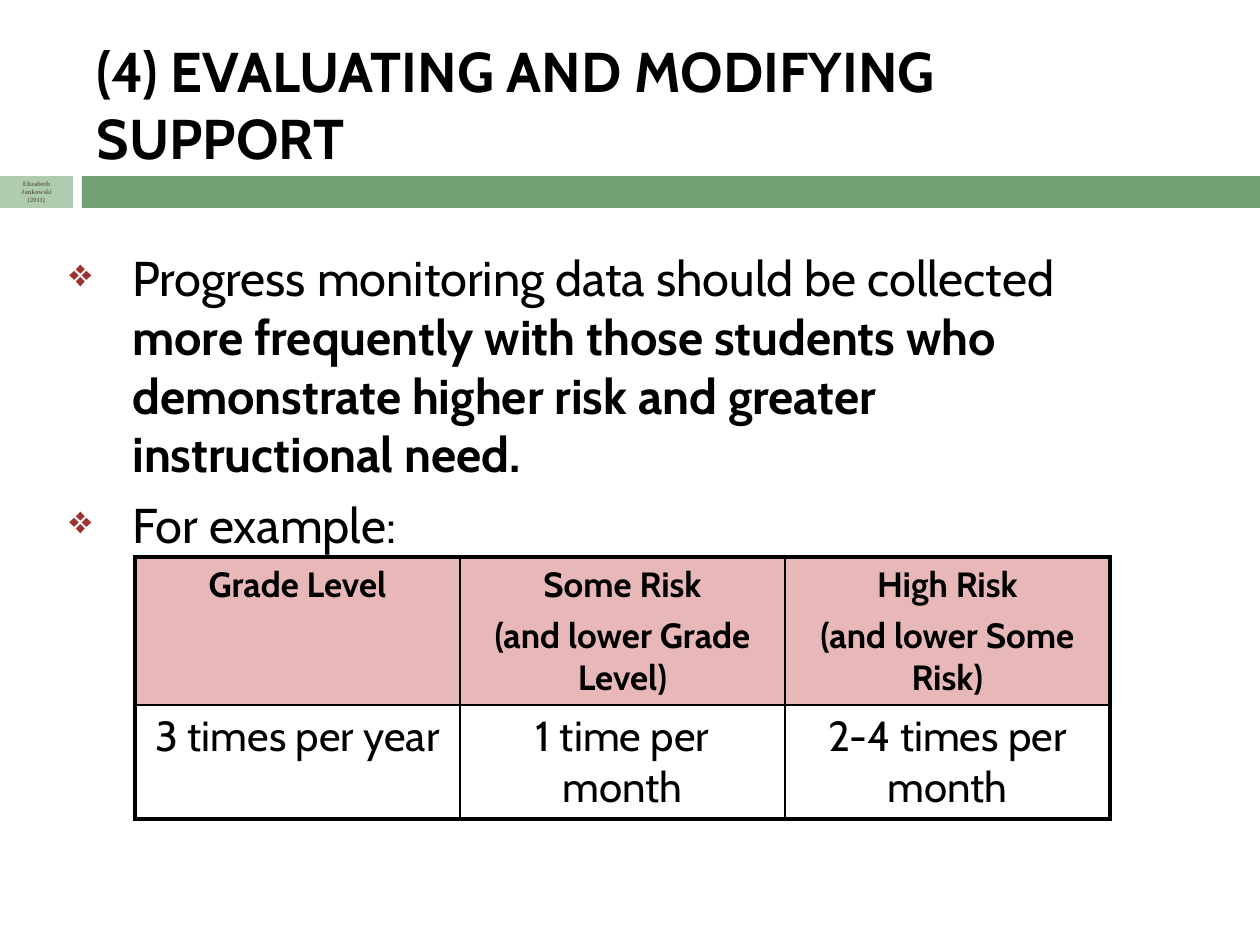
from lxml import etree
from pptx import Presentation
from pptx.dml.color import RGBColor
from pptx.enum.shapes import MSO_SHAPE
from pptx.enum.text import MSO_ANCHOR, MSO_AUTO_SIZE, PP_ALIGN
from pptx.oxml.ns import qn
from pptx.util import Emu, Pt

RECTANGLE = MSO_SHAPE.RECTANGLE
MIDDLE = MSO_ANCHOR.MIDDLE
NO_AUTOFIT = MSO_AUTO_SIZE.NONE
LEFT, CENTER = PP_ALIGN.LEFT, PP_ALIGN.CENTER

BLACK = RGBColor(0x00, 0x00, 0x00)
WHITE = RGBColor(0xFF, 0xFF, 0xFF)
GREEN = RGBColor(0x72, 0xA3, 0x76)
PALE_GREEN = RGBColor(0xB0, 0xCC, 0xB0)
OLIVE = RGBColor(0x67, 0x6A, 0x55)
RED = RGBColor(0x9D, 0x32, 0x32)
PINK = RGBColor(0xE8, 0xB7, 0xB7)

PX = 914400 / 126  # EMU per pixel


def place(*lengths):
    return [Emu(round(length * PX)) for length in lengths]


def add_span(para, text, color=BLACK, **formats):
    span = para.add_run()
    span.text = text
    span.font.color.rgb = color
    for name, value in ({"name": "Cabin", "bold": False} | formats).items():
        setattr(span.font, name, value)


deck = Presentation()
deck.slide_width, deck.slide_height = place(1260, 945)
page = deck.slides.add_slide(deck.slide_layouts[5])

# Green band under the title
for left, width, color in [(0, 73, PALE_GREEN), (82, 1178, GREEN)]:
    band = page.shapes.add_shape(RECTANGLE, *place(left, 176, width, 32))
    band.shadow.inherit = False
    band.fill.solid()
    band.fill.fore_color.rgb = color
    band.line.fill.background()

# Title
title = page.shapes.title
title.left, title.top, title.width, title.height = place(84, 32, 1081, 144)
frame = title.text_frame
frame.word_wrap, frame.auto_size, frame.vertical_anchor = True, NO_AUTOFIT, MIDDLE
para = frame.paragraphs[0]
para.alignment = LEFT
add_span(para, "(4) EVALUATING AND MODIFYING SUPPORT", size=Pt(32), bold=True)

# Credit on the short band
credit = page.shapes.add_textbox(*place(0, 175, 73, 34))
frame = credit.text_frame
frame.word_wrap, frame.vertical_anchor = True, MIDDLE
para = frame.paragraphs[0]
para.alignment = CENTER
add_span(para, "Elizabeth Jankowski (2011)", OLIVE,
         name="Times New Roman", size=Pt(3.8), bold=True)

# Bulleted text
points = [
    [("Progress monitoring data should be collected ", False),
     ("more frequently with those students who demonstrate higher risk "
      "and greater instructional need.", True)],
    [("For example:", False)],
]
body = page.shapes.add_textbox(*place(49, 242, 1097, 700))
frame = body.text_frame
frame.word_wrap = True
for index, point in enumerate(points):
    para = frame.add_paragraph() if index else frame.paragraphs[0]
    para.space_before = Pt(7)
    for text, bold in point:
        add_span(para, text, size=Pt(27.9), bold=bold)
    margin, indent = place(71, -63)
    properties = para._p.get_or_add_pPr()
    properties.set("marL", str(margin))
    properties.set("indent", str(indent))
    bullet_color = etree.SubElement(properties, qn("a:buClr"))
    etree.SubElement(bullet_color, qn("a:srgbClr"), val=str(RED))
    etree.SubElement(properties, qn("a:buSzPct"), val="80000")
    etree.SubElement(properties, qn("a:buChar"), char="❖")

# Monitoring frequency table: row height, text size, bold, fill, cells
rows = [
    (148, 20, True, PINK, [["Grade Level"],
                           ["Some Risk", "(and lower Grade Level)"],
                           ["High Risk", "(and lower Some Risk)"]]),
    (114, 24, False, WHITE, [["3 times per year"],
                             ["1 time per month"],
                             ["2-4 times per month"]]),
]
table = page.shapes.add_table(2, 3, *place(135, 557, 975, 262)).table
for column in table.columns:
    column.width = place(325)[0]
for row_index, (height, size, bold, fill, cells) in enumerate(rows):
    table.rows[row_index].height = place(height)[0]
    for column_index, lines in enumerate(cells):
        cell = table.cell(row_index, column_index)
        for index, line in enumerate(lines):
            frame = cell.text_frame
            para = frame.add_paragraph() if index else frame.paragraphs[0]
            para.alignment = CENTER
            if index:
                para.space_before = Pt(4.8)
            add_span(para, line, size=Pt(size), bold=bold)

        # Thick outer borders, thin inner ones, placed before the fill
        properties = cell._tc.get_or_add_tcPr()
        outer_edges = {"lnL": column_index == 0, "lnR": column_index == 2,
                       "lnT": row_index == 0, "lnB": row_index == 1}
        for edge, outer in outer_edges.items():
            border = etree.SubElement(properties, qn(f"a:{edge}"),
                                      w=str(Pt(2.25 if outer else 1)))
            solid = etree.SubElement(border, qn("a:solidFill"))
            etree.SubElement(solid, qn("a:srgbClr"), val=str(BLACK))
        cell.fill.solid()
        cell.fill.fore_color.rgb = fill

deck.save("out.pptx")
